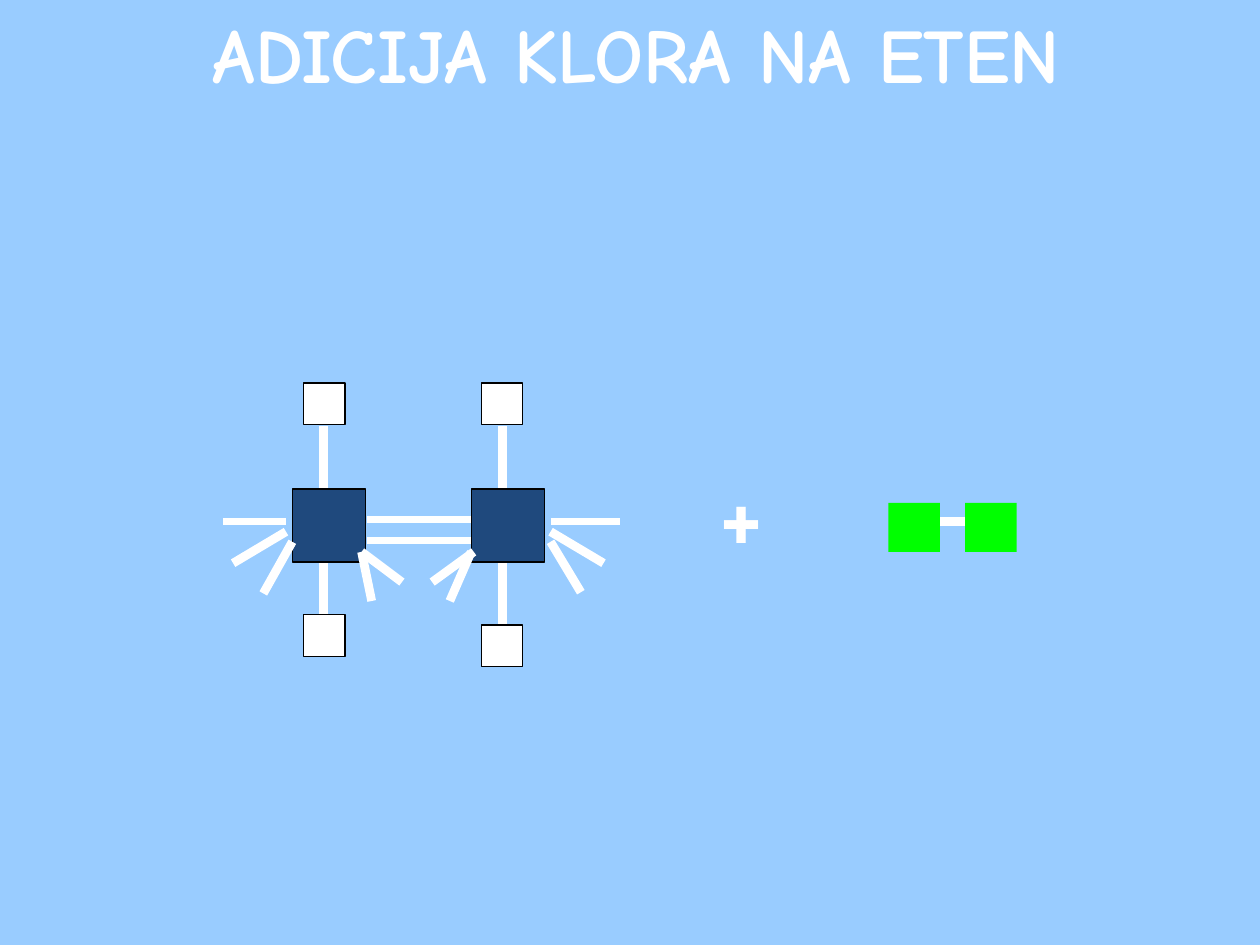
from dataclasses import dataclass

from lxml.etree import SubElement
from pptx import Presentation
from pptx.dml.color import RGBColor
from pptx.enum.shapes import MSO_CONNECTOR, MSO_SHAPE
from pptx.enum.text import PP_ALIGN
from pptx.oxml.ns import qn
from pptx.util import Inches, Pt


@dataclass(frozen=True)
class Theme:
    background: str = "99CCFF"
    white: str = "FFFFFF"
    outline: str = "000000"
    carbon: str = "1F497D"
    chlorine: str = "00FF00"
    title_font: str = "Comic Neue"
    symbol_font: str = "Roboto"
    title_size: int = 44
    symbol_size: int = 40
    bond: int = 5
    thin_bond: int = 4
    border: float = 0.75


THEME = Theme()
COLUMNS, ROWS = 100, 75


def write_text(frame, text, *, font, size, color, bold=True, align=PP_ALIGN.CENTER):
    paragraph = frame.paragraphs[0]
    paragraph.alignment = align
    run = paragraph.add_run()
    run.text = text
    run.font.name = font
    run.font.size = Pt(size)
    run.font.bold = bold
    run.font.color.rgb = RGBColor.from_string(color)


class SlideBuilder:
    def __init__(self, presentation, theme):
        self.theme = theme
        self.column = presentation.slide_width / COLUMNS
        self.row = presentation.slide_height / ROWS
        self.slide = presentation.slides.add_slide(presentation.slide_layouts[6])
        fill = self.slide.background.fill
        fill.solid()
        fill.fore_color.rgb = RGBColor.from_string(theme.background)

    def place(self, *lengths):
        units = (self.column, self.row) * 2
        return [round(length * unit) for length, unit in zip(lengths, units)]

    def atom(self, left, top, width, height, color, bordered=True):
        shape = self.slide.shapes.add_shape(
            MSO_SHAPE.RECTANGLE, *self.place(left, top, width, height))
        shape.shadow.inherit = False
        shape.fill.solid()
        shape.fill.fore_color.rgb = RGBColor.from_string(color)
        if bordered:
            shape.line.color.rgb = RGBColor.from_string(self.theme.outline)
            shape.line.width = Pt(self.theme.border)
        else:
            shape.line.fill.background()

    def bond(self, start, end, width=THEME.bond):
        connector = self.slide.shapes.add_connector(
            MSO_CONNECTOR.STRAIGHT, *self.place(*start, *end))
        connector.line.color.rgb = RGBColor.from_string(self.theme.white)
        connector.line.width = Pt(width)
        SubElement(connector._element.spPr, qn("a:effectLst"))

    def label(self, left, top, width, height, text, font, size):
        box = self.slide.shapes.add_textbox(*self.place(left, top, width, height))
        box.text_frame.word_wrap = False
        write_text(box.text_frame, text, font=font, size=size, color=self.theme.white)


def draw_ethene(builder):
    theme = builder.theme
    carbon, hydrogen = 5.8, 3.3
    carbon_top, upper_top = 38.8, 30.4
    carbon_bottom = carbon_top + carbon
    sides = ((23.2, 24.1, 25.7, 48.8), (37.4, 38.2, 39.9, 49.6))

    for row in (41.2, 42.9):
        builder.bond((29.1, row), (37.4, row), theme.thin_bond)
    for carbon_left, hydrogen_left, axis, lower_top in sides:
        builder.bond((axis, 33.8), (axis, carbon_top))
        builder.bond((axis, carbon_bottom), (axis, lower_top))
        builder.atom(carbon_left, carbon_top, carbon, carbon, theme.carbon)
        for top in (upper_top, lower_top):
            builder.atom(hydrogen_left, top, hydrogen, hydrogen, theme.white)

    rays = (
        ((22.7, 42.2), (18.5, 44.7)), ((43.7, 42.2), (47.9, 44.7)),
        ((28.7, 43.8), (31.9, 46.2)), ((37.6, 43.8), (34.3, 46.2)),
        ((28.7, 43.8), (29.5, 47.7)), ((37.4, 43.8), (35.7, 47.7)),
        ((23.2, 43), (20.9, 47.1)), ((43.7, 43), (46.1, 47)),
    )
    for start, end in rays:
        builder.bond(start, end)
    for start, end in ((17.7, 22.7), (43.7, 49.2)):
        builder.bond((start, 41.4), (end, 41.4), theme.thin_bond)


def draw_chlorine(builder):
    builder.bond((73.6, 41.4), (78.4, 41.4))
    for left in (70.5, 76.6):
        builder.atom(left, 39.9, 4.1, 3.9, builder.theme.chlorine, bordered=False)


def main():
    presentation = Presentation()
    presentation.slide_width, presentation.slide_height = Inches(10), Inches(7.5)
    builder = SlideBuilder(presentation, THEME)
    draw_ethene(builder)
    builder.label(55.6, 37.5, 6.6, 7.7, "+", THEME.symbol_font, THEME.symbol_size)
    draw_chlorine(builder)
    builder.label(8.3, 0, 84.5, 8.3, "ADICIJA KLORA NA ETEN",
                  THEME.title_font, THEME.title_size)
    presentation.save("out.pptx")


if __name__ == "__main__":
    main()
